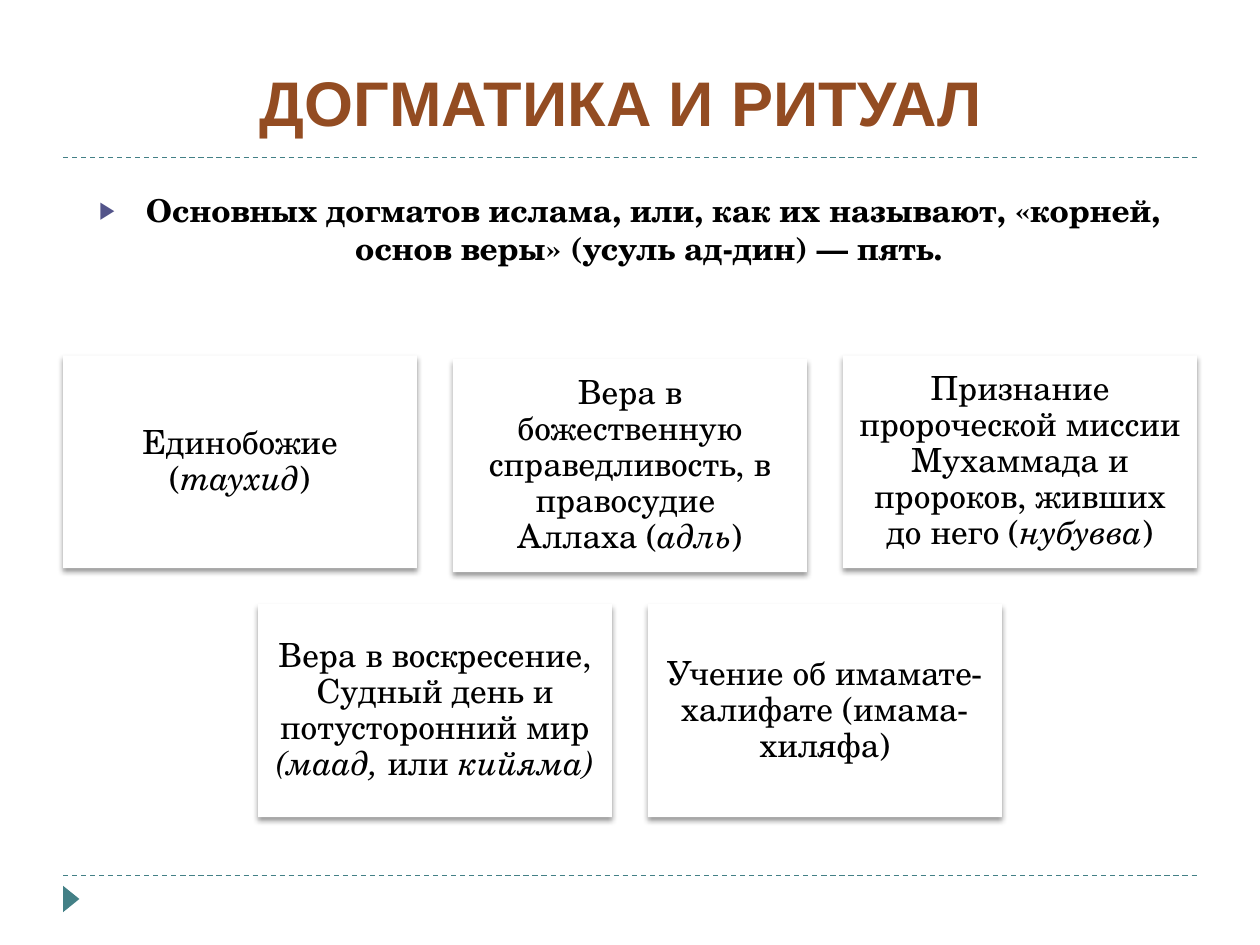
from typing import NamedTuple

from lxml.etree import SubElement
from pptx import Presentation
from pptx.dml.color import RGBColor
from pptx.enum.dml import MSO_LINE
from pptx.enum.shapes import MSO_CONNECTOR, MSO_SHAPE
from pptx.enum.text import MSO_ANCHOR as Anchor, PP_ALIGN as Align
from pptx.oxml.ns import qn
from pptx.util import Emu, Inches, Pt

SANS, SERIF = "Arial", "TeX Gyre Schola"
TEAL, BROWN, INDIGO, BLACK, WHITE = "438086", "934C22", "53548A", "000000", "FFFFFF"

# Card grid: three columns between the page margins
MARGIN, CARD_WIDTH, CARD_HEIGHT = 0.5, 2.81, 1.69
PAGE_WIDTH, PAGE_HEIGHT = 10, 7.5
GAP = (PAGE_WIDTH - 2 * MARGIN - 3 * CARD_WIDTH) / 2
CARDS_TOP = 2.82


class Words(NamedTuple):
    text: str
    italic: bool = False


class Card(NamedTuple):
    column: float
    row: int
    paragraphs: list[list[Words]]
    drop: float = 0


CARDS = [
    Card(0, 0, [[Words("Единобожие ("), Words("таухид", True), Words(")")]]),
    Card(1, 0, [[Words("Вера в божественную справедливость, в правосудие ")],
                [Words("Аллаха ("), Words("адль", True), Words(")")]], drop=0.03),
    Card(2, 0, [[Words("Признание пророческой миссии Мухаммада и пророков, живших до него ("),
                 Words("нубувва", True), Words(")")]]),
    Card(0.5, 1, [[Words("Вера в воскресение, Судный день и потусторонний мир "),
                   Words("(маад, ", True), Words("или "), Words("кийяма)", True)]]),
    Card(1.5, 1, [[Words("Учение об имамате-халифате (имама-хиляфа)")]]),
]


def color(value: str) -> RGBColor:
    return RGBColor.from_string(value)


def add_words(para, words: Words, size: float, font: str, ink: str, bold: bool = False) -> None:
    span = para.add_run()
    span.text = words.text
    span.font.size, span.font.name = Pt(size), font
    span.font.bold, span.font.italic = bold, words.italic
    span.font.color.rgb = color(ink)


def add_rule(page, top: float) -> None:
    rule = page.shapes.add_connector(
        MSO_CONNECTOR.STRAIGHT, Inches(MARGIN), Inches(top),
        Inches(PAGE_WIDTH - MARGIN), Inches(top))
    rule.line.color.rgb = color(TEAL)
    rule.line.width = Pt(0.75)
    rule.line.dash_style = MSO_LINE.DASH
    SubElement(rule._element.spPr, qn("a:effectLst"))


def add_text_box(page, left: float, top: float, width: float, height: float, anchor):
    box = page.shapes.add_textbox(Inches(left), Inches(top), Inches(width), Inches(height))
    box.text_frame.word_wrap = True
    box.text_frame.vertical_anchor = anchor
    para = box.text_frame.paragraphs[0]
    para.alignment = Align.CENTER
    return para


def add_bullet(para, symbol: str, ink: str, percent: int, indent: float) -> None:
    props = para._p.get_or_add_pPr()
    props.set("marL", str(Inches(indent)))
    props.set("indent", str(-Inches(indent)))
    SubElement(SubElement(props, qn("a:buClr")), qn("a:srgbClr"), val=ink)
    SubElement(props, qn("a:buSzPct"), val=str(percent * 1000))
    SubElement(props, qn("a:buFont"), typeface=SANS)
    SubElement(props, qn("a:buChar"), char=symbol)


def add_soft_shadow(shape) -> None:
    effects = SubElement(shape._element.spPr, qn("a:effectLst"))
    shadow = SubElement(effects, qn("a:outerShdw"), blurRad=str(Pt(3)), dist=str(Pt(2)),
                        dir=str(90 * 60000), rotWithShape="0")
    tint = SubElement(shadow, qn("a:srgbClr"), val=BLACK)
    SubElement(tint, qn("a:alpha"), val="40000")


def add_card(page, card: Card) -> None:
    left = MARGIN + card.column * (CARD_WIDTH + GAP)
    top = CARDS_TOP + card.row * (CARD_HEIGHT + GAP) + card.drop
    box = page.shapes.add_shape(MSO_SHAPE.RECTANGLE, Inches(left), Inches(top),
                                Inches(CARD_WIDTH), Inches(CARD_HEIGHT))
    box.fill.solid()
    box.fill.fore_color.rgb = color(WHITE)
    box.line.fill.background()
    add_soft_shadow(box)
    frame = box.text_frame
    frame.word_wrap = True
    frame.vertical_anchor = Anchor.MIDDLE
    frame.margin_left = frame.margin_right = Inches(0.08)
    frame.margin_top = frame.margin_bottom = Inches(0.08)
    for index, line in enumerate(card.paragraphs):
        para = frame.add_paragraph() if index else frame.paragraphs[0]
        para.alignment = Align.CENTER
        para.line_spacing = 0.9
        for words in line:
            add_words(para, words, 19, SERIF, BLACK)


def main() -> None:
    deck = Presentation()
    deck.slide_width, deck.slide_height = Inches(PAGE_WIDTH), Inches(PAGE_HEIGHT)
    page = deck.slides.add_slide(deck.slide_layouts[6])

    # Frame: dashed rules and the corner marker
    for top in (6.95, 1.25):
        add_rule(page, top)
    marker = page.shapes.add_shape(MSO_SHAPE.ISOSCELES_TRIANGLE, Inches(0.46), Inches(7.07),
                                   Inches(0.21), Inches(0.13))
    marker.rotation = 90
    marker.shadow.inherit = False
    marker.fill.solid()
    marker.fill.fore_color.rgb = color(TEAL)
    marker.line.fill.background()

    # Title and lead sentence
    title = add_text_box(page, MARGIN, 0.21, 9, 0.94, Anchor.BOTTOM)
    add_words(title, Words("ДОГМАТИКА И РИТУАЛ "), 36, SANS, BROWN, bold=True)
    lead = add_text_box(page, 0.43, 1.47, 9.14, 0.9, Anchor.TOP)
    lead.space_before = Pt(6)
    add_bullet(lead, "▶", INDIGO, 76, 0.3)
    add_words(lead, Words(" Основных догматов ислама, или, как их называют, «корней, "
                          "основ веры» (усуль ад-дин) — пять."), 18, SERIF, BLACK, bold=True)

    # Five articles of faith
    for card in CARDS:
        add_card(page, card)

    deck.save("out.pptx")


if __name__ == "__main__":
    main()
